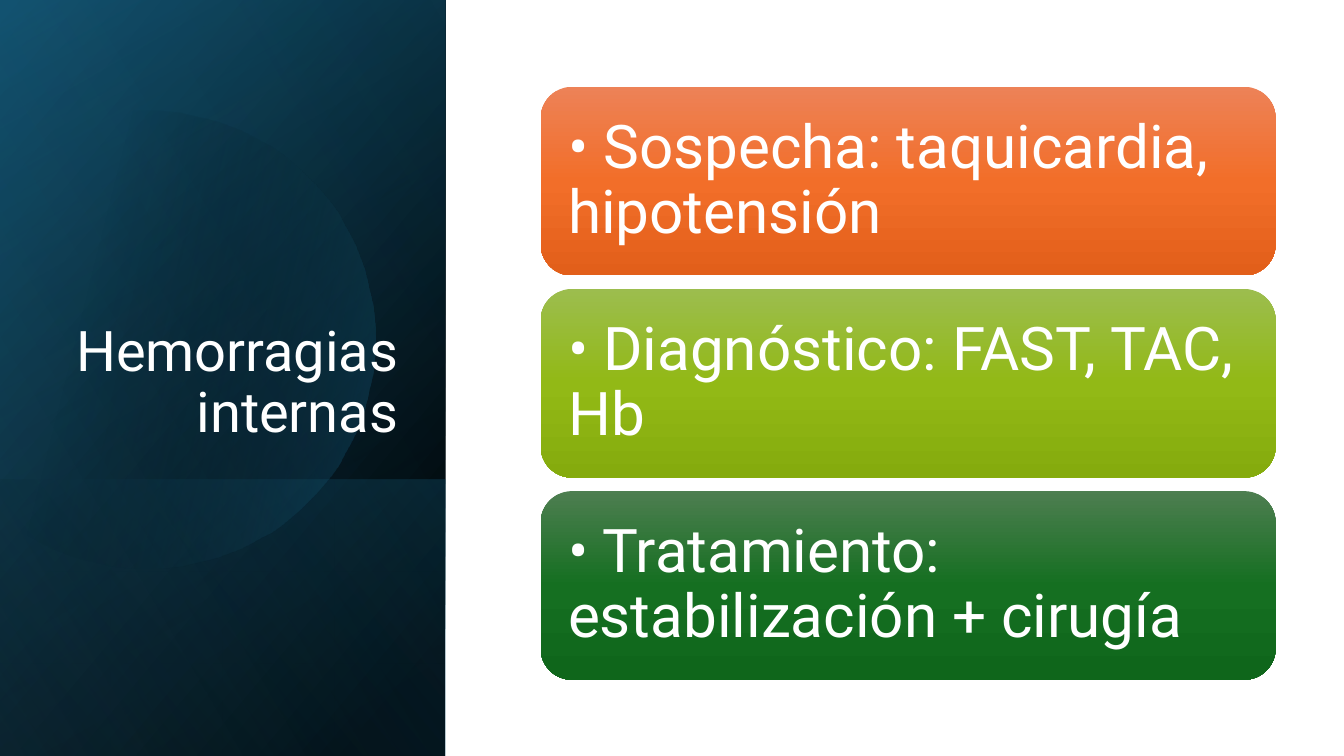
import math

import pptx
import pptx.dml.color
import pptx.enum.shapes
import pptx.enum.text
import pptx.util
from lxml import etree
from pptx.oxml.ns import qn

Pt = pptx.util.Pt
SHAPE = pptx.enum.shapes.MSO_SHAPE
ALIGN = pptx.enum.text.PP_ALIGN
ANCHOR = pptx.enum.text.MSO_ANCHOR

COLORS = {
    "white": "FFFFFF", "black": "000000", "navy": "104862", "teal": "156082", "sky": "46B1E1",
    "orange_light": "ED8257", "orange": "F26E29", "orange_dark": "E25F1A",
    "lime_light": "9CBD4E", "lime": "92B916", "lime_dark": "85AB0D",
    "green_light": "4D7E50", "green": "156F21", "green_dark": "0F661B",
}
FONT = "Roboto"
TITLE = "Hemorragias internas"
CARDS = [
    ("• Sospecha: taquicardia, hipotensión", "orange"),
    ("• Diagnóstico: FAST, TAC, Hb", "lime"),
    ("• Tratamiento: estabilización + cirugía", "green"),
]
SLIDE_W, SLIDE_H = 960, 540
PANEL_W = 318
BACK_PANELS = [
    (0, 540, [(8, "black", 100), (100, "navy", 100)], 50),
    (0, 540, [(0, "black", 0), (99, "teal", 46)], 30),
    (342.7, 197.3, [(2, "teal", 29), (100, "black", 30)], 130),
]
GLOW_PANEL = (0, 540, [(0, "black", 0), (99, "sky", 11)], 120)
DISC_X, DISC_Y, DISC_R = 104.5, 242.5, 163.5
DISC_STOPS = [(29, "black", 0), (100, "teal", 43)]
CARD_X, CARD_Y, CARD_W, CARD_H, CARD_STEP = 386.2, 62, 525, 134.8, 144.4


def paint(sp, stops, angle):
    sp.shadow.inherit = False
    sp.line.fill.background()
    sp.fill.gradient()
    grad = sp._element.spPr.find(qn("a:gradFill"))
    grad.set("rotWithShape", "1")
    for child in list(grad):
        grad.remove(child)
    gs_list = etree.SubElement(grad, qn("a:gsLst"))
    for pos, color, opacity in stops:
        gs = etree.SubElement(gs_list, qn("a:gs"), pos=str(pos * 1000))
        clr = etree.SubElement(gs, qn("a:srgbClr"), val=COLORS[color])
        if opacity < 100:
            etree.SubElement(clr, qn("a:alpha"), val=str(opacity * 1000))
    etree.SubElement(grad, qn("a:lin"), ang=str(angle * 60000), scaled="0")


def add_panel(s, top, height, stops, angle):
    left = (PANEL_W - height) / 2
    sp = s.shapes.add_shape(SHAPE.RECTANGLE, Pt(left), Pt(top - left), Pt(height), Pt(PANEL_W))
    sp.rotation = 90
    sp._element.spPr.find(qn("a:xfrm")).set("flipH", "1")
    paint(sp, stops, angle)


def add_disc(s):
    points = [
        (DISC_X + DISC_R * math.cos(math.radians(a)), DISC_Y + DISC_R * math.sin(math.radians(a)))
        for a in range(-135, 136, 3)
    ]
    builder = s.shapes.build_freeform(*points[0], scale=Pt(1))
    builder.add_line_segments(points[1:], close=True)
    paint(builder.convert_to_shape(), DISC_STOPS, 14)


def write(sp, text, size, align=ALIGN.LEFT, anchor=ANCHOR.MIDDLE, inset=(7.2, 3.6)):
    tf = sp.text_frame
    tf.word_wrap = True
    tf.vertical_anchor = anchor
    tf.margin_left = tf.margin_right = Pt(inset[0])
    tf.margin_top = tf.margin_bottom = Pt(inset[1])
    p = tf.paragraphs[0]
    p.alignment = align
    p.line_spacing = 0.9
    r = p.add_run()
    r.text = text
    r.font.name = FONT
    r.font.size = Pt(size)
    r.font.color.rgb = pptx.dml.color.RGBColor.from_string(COLORS["white"])


def main():
    prs = pptx.Presentation()
    prs.slide_width, prs.slide_height = Pt(SLIDE_W), Pt(SLIDE_H)
    s = prs.slides.add_slide(prs.slide_layouts[6])

    for panel in BACK_PANELS:
        add_panel(s, *panel)
    add_disc(s)
    add_panel(s, *GLOW_PANEL)

    title = s.shapes.add_textbox(Pt(46), Pt(132.5), Pt(245.5), Pt(188.6))
    write(title, TITLE, 40, align=ALIGN.RIGHT, anchor=ANCHOR.BOTTOM)

    for i, (text, hue) in enumerate(CARDS):
        card = s.shapes.add_shape(
            SHAPE.ROUNDED_RECTANGLE, Pt(CARD_X), Pt(CARD_Y + i * CARD_STEP), Pt(CARD_W), Pt(CARD_H)
        )
        paint(card, [(0, hue + "_light", 100), (50, hue, 100), (100, hue + "_dark", 100)], 90)
        write(card, text, 43, inset=(13, 13))

    prs.save("out.pptx")


if __name__ == "__main__":
    main()
